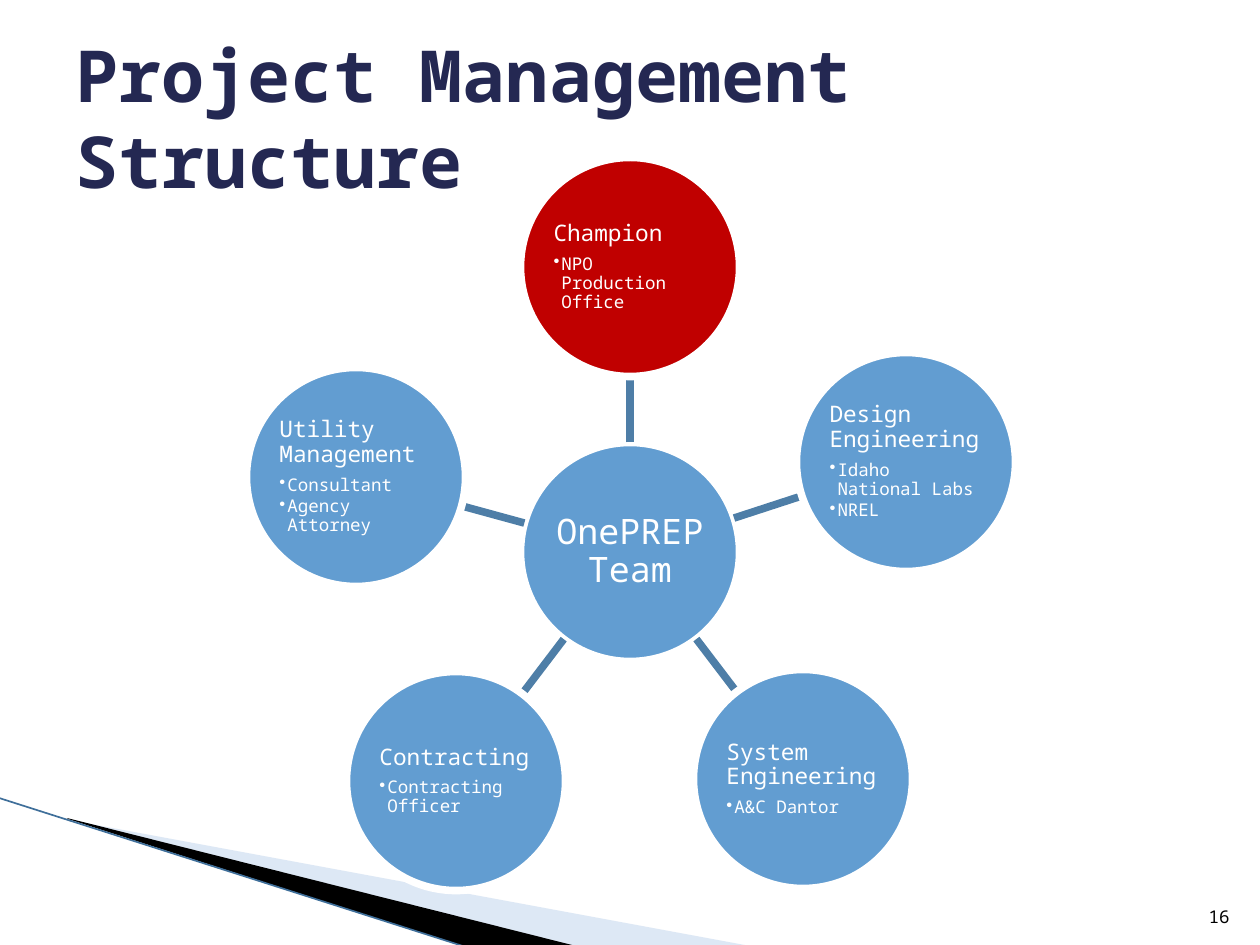
from dataclasses import dataclass
from math import hypot

from lxml.etree import SubElement
from pptx import Presentation
from pptx.dml.color import RGBColor
from pptx.enum.shapes import MSO_CONNECTOR, MSO_SHAPE
from pptx.enum.text import MSO_ANCHOR, MSO_AUTO_SIZE, PP_ALIGN
from pptx.oxml.ns import qn
from pptx.util import Pt

EMU_PER_PX = 914400 / 126
FONT = "Noto Sans Mono"

WHITE = RGBColor(0xFF, 0xFF, 0xFF)
BLACK = RGBColor(0x00, 0x00, 0x00)
NAVY = RGBColor(0x24, 0x28, 0x52)
BLUE = RGBColor(0x62, 0x9D, 0xD1)
SPOKE_BLUE = RGBColor(0x4E, 0x7E, 0xA7)
RED = RGBColor(0xC0, 0x00, 0x00)
PALE_BLUE = RGBColor(0xAB, 0xC6, 0xE6)
EDGE_BLUE = RGBColor(0x3F, 0x6F, 0x9A)

DIAMETER = 219
LABEL_SIZE = 155


@dataclass(frozen=True)
class Circle:
    x: int  # centre
    y: int
    heading: str
    members: tuple[str, ...] = ()
    fill: RGBColor = BLUE


HUB = Circle(630, 552, "OnePREP Team")
ROLES = (
    Circle(630, 267, "Champion", ("NPO Production Office",), RED),
    Circle(906, 462, "Design Engineering", ("Idaho National Labs", "NREL")),
    Circle(803, 779, "System Engineering", ("A&C Dantor",)),
    Circle(456, 781, "Contracting", ("Contracting Officer",)),
    Circle(356, 477, "Utility Management", ("Consultant", "Agency Attorney")),
)


def px(length: float) -> int:
    return round(length * EMU_PER_PX)


def style_font(paragraph, size: float, color: RGBColor, bold: bool = False) -> None:
    for run in paragraph.runs:
        run.font.name = FONT
        run.font.size = Pt(size)
        run.font.color.rgb = color
        run.font.bold = bold


def add_text_box(slide, left: int, top: int, size: int, anchor):
    text_frame = slide.shapes.add_textbox(px(left), px(top), px(size), px(size)).text_frame
    text_frame.word_wrap = True
    text_frame.vertical_anchor = anchor
    return text_frame


def add_bullet(paragraph) -> None:
    properties = paragraph._p.get_or_add_pPr()
    properties.set("lvl", "1")
    properties.set("marL", str(px(8)))
    properties.set("indent", str(-px(8)))
    SubElement(properties, qn("a:buChar")).set("char", "•")


def add_line(slide, start, end, color: RGBColor, width: float) -> None:
    connector = slide.shapes.add_connector(
        MSO_CONNECTOR.STRAIGHT, *(px(value) for value in (*start, *end)))
    connector.line.color.rgb = color
    connector.line.width = Pt(width)
    SubElement(connector._element.spPr, qn("a:effectLst"))


def add_spoke(slide, role: Circle) -> None:
    """Run from the hub's rim to the role's rim, along the line of centres."""
    dx, dy = role.x - HUB.x, role.y - HUB.y
    share = DIAMETER / 2 / hypot(dx, dy)
    add_line(slide, (HUB.x + dx * share, HUB.y + dy * share),
             (role.x - dx * share, role.y - dy * share), SPOKE_BLUE, 4.33)


def add_circle(slide, circle: Circle) -> None:
    shape = slide.shapes.add_shape(
        MSO_SHAPE.OVAL, px(circle.x - DIAMETER / 2), px(circle.y - DIAMETER / 2),
        px(DIAMETER), px(DIAMETER))
    shape.shadow.inherit = False
    shape.fill.solid()
    shape.fill.fore_color.rgb = circle.fill
    shape.line.color.rgb = WHITE
    shape.line.width = Pt(4.33)

    text_frame = add_text_box(slide, circle.x - LABEL_SIZE / 2, circle.y - LABEL_SIZE / 2,
                              LABEL_SIZE, MSO_ANCHOR.MIDDLE)
    text_frame.margin_left = text_frame.margin_right = px(1)
    text_frame.margin_top = text_frame.margin_bottom = px(1)
    text_frame.text = "\n".join((circle.heading, *circle.members))
    heading, *members = text_frame.paragraphs
    heading.line_spacing = 0.9
    heading.space_after = Pt(5)
    heading.alignment = PP_ALIGN.LEFT if members else PP_ALIGN.CENTER
    style_font(heading, 13 if members else 20, WHITE)
    for paragraph in members:
        paragraph.line_spacing = 0.9
        paragraph.space_after = Pt(1.5)
        add_bullet(paragraph)
        style_font(paragraph, 10, WHITE)


def add_wedge(slide, points, color: RGBColor, opacity: int = 100) -> None:
    builder = slide.shapes.build_freeform(*points[0], scale=EMU_PER_PX)
    builder.add_line_segments(points[1:], close=True)
    shape = builder.convert_to_shape()
    shape.shadow.inherit = False
    shape.fill.solid()
    shape.fill.fore_color.rgb = color
    shape.line.fill.background()
    if opacity < 100:
        color_element = shape._element.spPr.find(qn("a:solidFill"))[0]
        SubElement(color_element, qn("a:alpha")).set("val", str(opacity * 1000))


def add_title(slide) -> None:
    title = slide.shapes.title
    title.left, title.top, title.width, title.height = px(63), px(38), px(1134), px(158)
    text_frame = title.text_frame
    text_frame.text = "Project Management Structure"
    text_frame.word_wrap = True
    text_frame.auto_size = MSO_AUTO_SIZE.NONE
    text_frame.vertical_anchor = MSO_ANCHOR.MIDDLE
    paragraph = text_frame.paragraphs[0]
    paragraph.alignment = PP_ALIGN.LEFT
    style_font(paragraph, 41, NAVY, bold=True)


def main() -> None:
    presentation = Presentation()
    presentation.slide_width, presentation.slide_height = px(1260), px(945)
    slide = presentation.slides.add_slide(presentation.slide_layouts[5])
    add_title(slide)

    # Corner decoration
    add_wedge(slide, ((69, 820), (750, 946), (575, 946), (69, 819)), PALE_BLUE, opacity=40)
    add_wedge(slide, ((67, 818), (576, 946), (469, 948), (68, 819)), BLACK)
    add_line(slide, (-1, 798), (469, 948), EDGE_BLUE, 0.95)

    # Hub, spokes and roles
    add_circle(slide, HUB)
    for role in ROLES:
        add_spoke(slide, role)
        add_circle(slide, role)

    # Slide number
    number_frame = add_text_box(slide, 1192, 883, 50, MSO_ANCHOR.BOTTOM)
    number_frame.text = "16"
    number_frame.paragraphs[0].alignment = PP_ALIGN.RIGHT
    style_font(number_frame.paragraphs[0], 10, BLACK)

    presentation.save("out.pptx")


if __name__ == "__main__":
    main()
